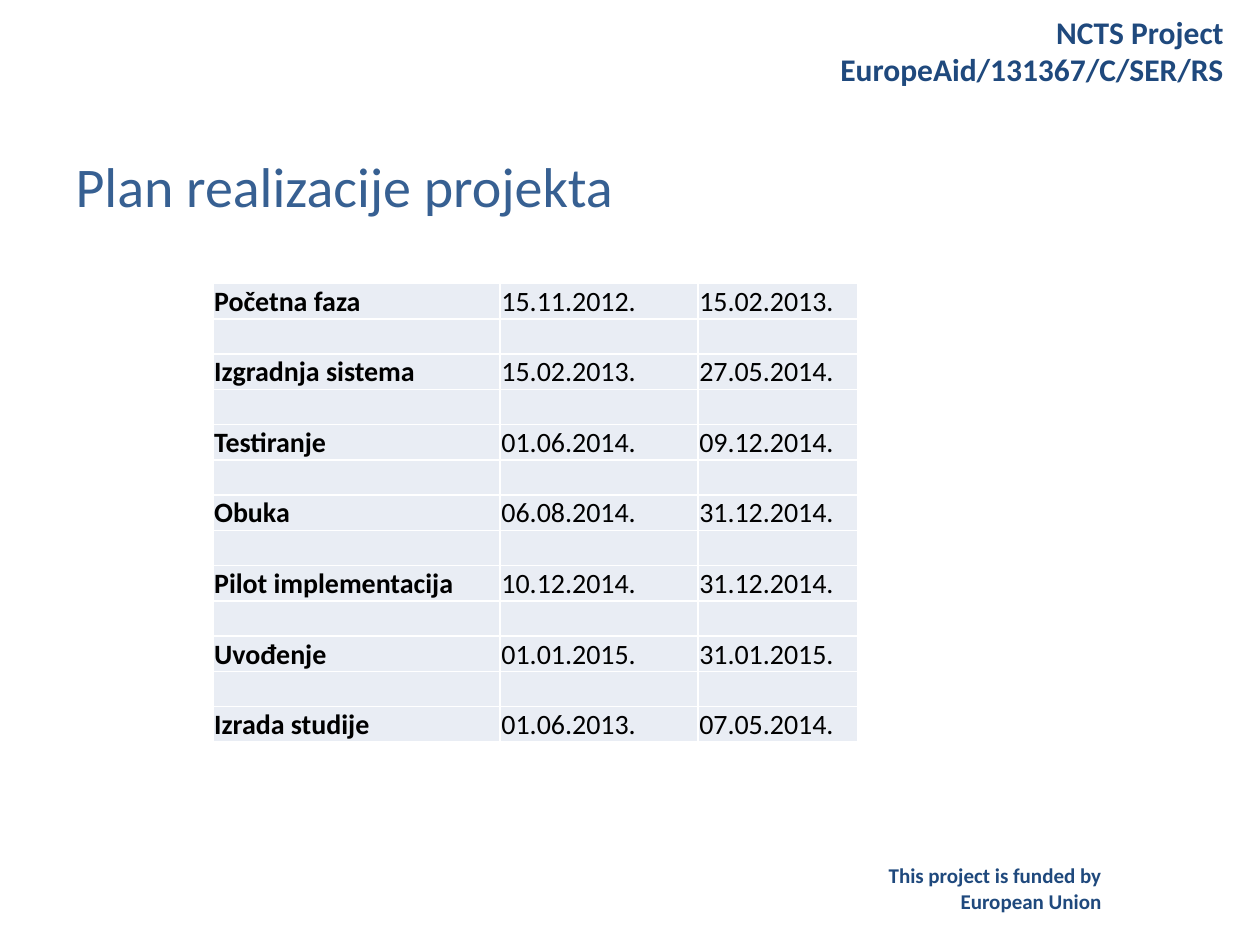
from dataclasses import dataclass

import pptx
import pptx.dml.color
import pptx.enum.text
import pptx.oxml.ns
import pptx.util
from lxml import etree

Inches = pptx.util.Inches
Pt = pptx.util.Pt
RGB = pptx.dml.color.RGBColor.from_string
ALIGN = pptx.enum.text.PP_ALIGN
ANCHOR = pptx.enum.text.MSO_ANCHOR
qn = pptx.oxml.ns.qn


@dataclass(frozen=True)
class Theme:
    font: str = "Calibri"
    navy: str = "1F497D"
    blue: str = "376092"
    text: str = "000000"
    band: str = "E9EDF4"
    border: str = "FFFFFF"
    title_pt: int = 32
    header_pt: int = 18
    table_pt: int = 16
    footer_pt: int = 12
    border_pt: int = 1


@dataclass(frozen=True)
class Phase:
    name: str
    start: str
    end: str


@dataclass(frozen=True)
class Label:
    text: str
    left: float
    top: float
    width: float
    height: float
    size: int


THEME = Theme()

PHASES = [
    Phase("Početna faza", "15.11.2012.", "15.02.2013."),
    Phase("Izgradnja sistema", "15.02.2013.", "27.05.2014."),
    Phase("Testiranje", "01.06.2014.", "09.12.2014."),
    Phase("Obuka", "06.08.2014.", "31.12.2014."),
    Phase("Pilot implementacija", "10.12.2014.", "31.12.2014."),
    Phase("Uvođenje", "01.01.2015.", "31.01.2015."),
    Phase("Izrada studije", "01.06.2013.", "07.05.2014."),
]

LABELS = [
    Label("This project is funded by European Union", 6.95, 6.8, 1.89, 0.5, THEME.footer_pt),
    Label("NCTS Project\nEuropeAid/131367/C/SER/RS", 6.12, 0.05, 3.69, 0.71, THEME.header_pt),
]

COLUMN_WIDTHS = [2.28, 1.57, 1.27]
ROW_HEIGHT = 0.28


def write(tf, text: str, *, size: int, color: str, bold: bool = False, align=ALIGN.LEFT) -> None:
    for i, line in enumerate(text.split("\n")):
        p = tf.paragraphs[0] if i == 0 else tf.add_paragraph()
        p.alignment = align
        p.space_before = Pt(0)
        if not line:
            etree.SubElement(p._p, qn("a:endParaRPr"), sz=str(size * 100))
            continue
        r = p.add_run()
        r.text = line
        r.font.name = THEME.font
        r.font.size = Pt(size)
        r.font.bold = bold
        r.font.color.rgb = RGB(color)


def add_label(s, label: Label) -> None:
    sp = s.shapes.add_textbox(
        Inches(label.left), Inches(label.top), Inches(label.width), Inches(label.height)
    )
    sp.text_frame.word_wrap = True
    write(sp.text_frame, label.text, size=label.size, color=THEME.navy, bold=True, align=ALIGN.RIGHT)


def add_title(s, text: str) -> None:
    sp = s.shapes.title
    sp.left, sp.top, sp.width, sp.height = Inches(0.5), Inches(1.15), Inches(9), Inches(0.65)
    sp.text_frame.vertical_anchor = ANCHOR.TOP
    write(sp.text_frame, text, size=THEME.title_pt, color=THEME.blue)


def format_cell(cell, text: str, bold: bool) -> None:
    cell.margin_left = cell.margin_right = cell.margin_top = Inches(0.01)
    cell.margin_bottom = 0
    cell.vertical_anchor = ANCHOR.BOTTOM
    tc_pr = cell._tc.get_or_add_tcPr()
    for side in ("lnL", "lnR", "lnT", "lnB"):
        ln = etree.SubElement(tc_pr, qn(f"a:{side}"), w=str(Pt(THEME.border_pt)))
        fill = etree.SubElement(ln, qn("a:solidFill"))
        etree.SubElement(fill, qn("a:srgbClr"), val=THEME.border)
    cell.fill.solid()
    cell.fill.fore_color.rgb = RGB(THEME.band)
    write(cell.text_frame, text, size=THEME.table_pt, color=THEME.text, bold=bold)


def add_schedule(s, phases: list[Phase]) -> None:
    count = 2 * len(phases) - 1
    table = s.shapes.add_table(
        count, len(COLUMN_WIDTHS), Inches(1.69), Inches(2.25),
        Inches(sum(COLUMN_WIDTHS)), Inches(count * ROW_HEIGHT),
    ).table
    table.first_row = table.horz_banding = False
    for column, width in zip(table.columns, COLUMN_WIDTHS):
        column.width = Inches(width)
    for i, row in enumerate(table.rows):
        row.height = Inches(ROW_HEIGHT)
        phase = phases[i // 2] if i % 2 == 0 else Phase("", "", "")
        for j, text in enumerate((phase.name, phase.start, phase.end)):
            format_cell(row.cells[j], text, bold=j == 0)


def main() -> None:
    prs = pptx.Presentation()
    prs.slide_width, prs.slide_height = Inches(10), Inches(7.5)
    s = prs.slides.add_slide(prs.slide_layouts[5])
    for label in LABELS:
        add_label(s, label)
    add_title(s, "Plan realizacije projekta")
    add_schedule(s, PHASES)
    prs.save("out.pptx")


if __name__ == "__main__":
    main()
